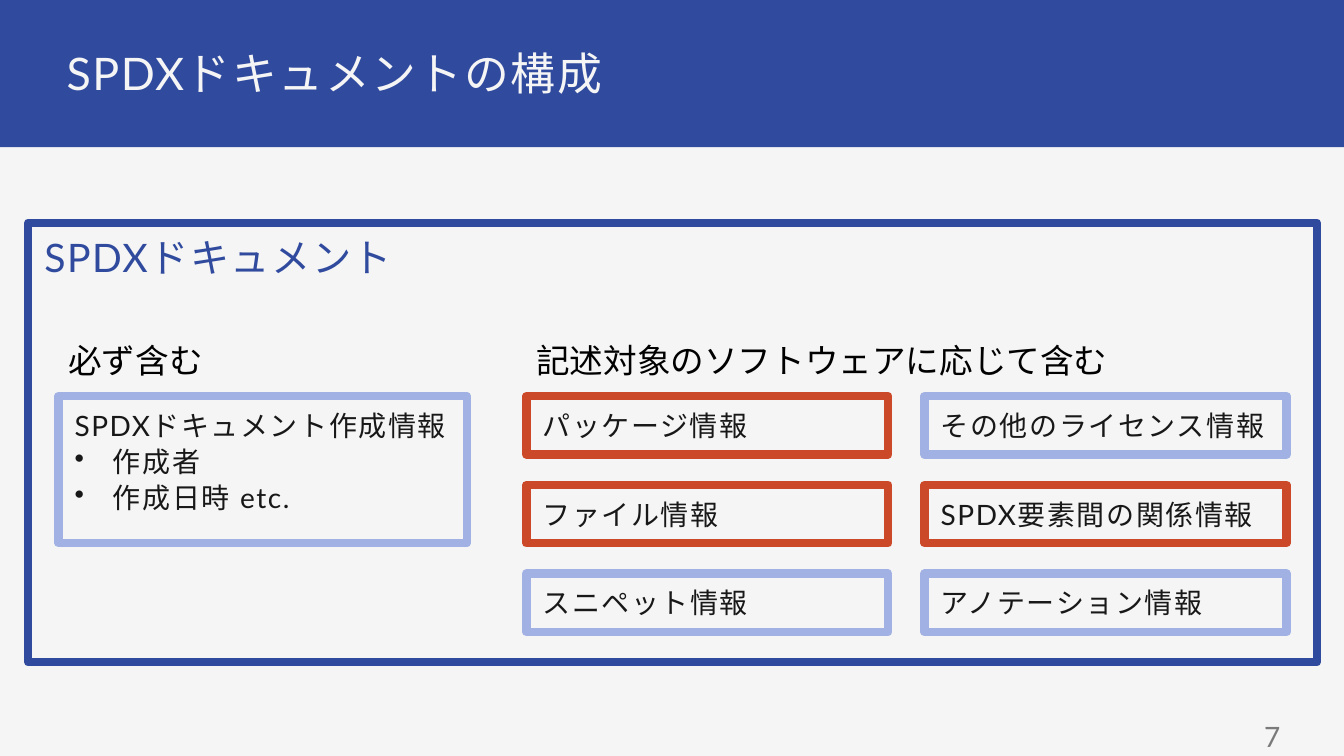
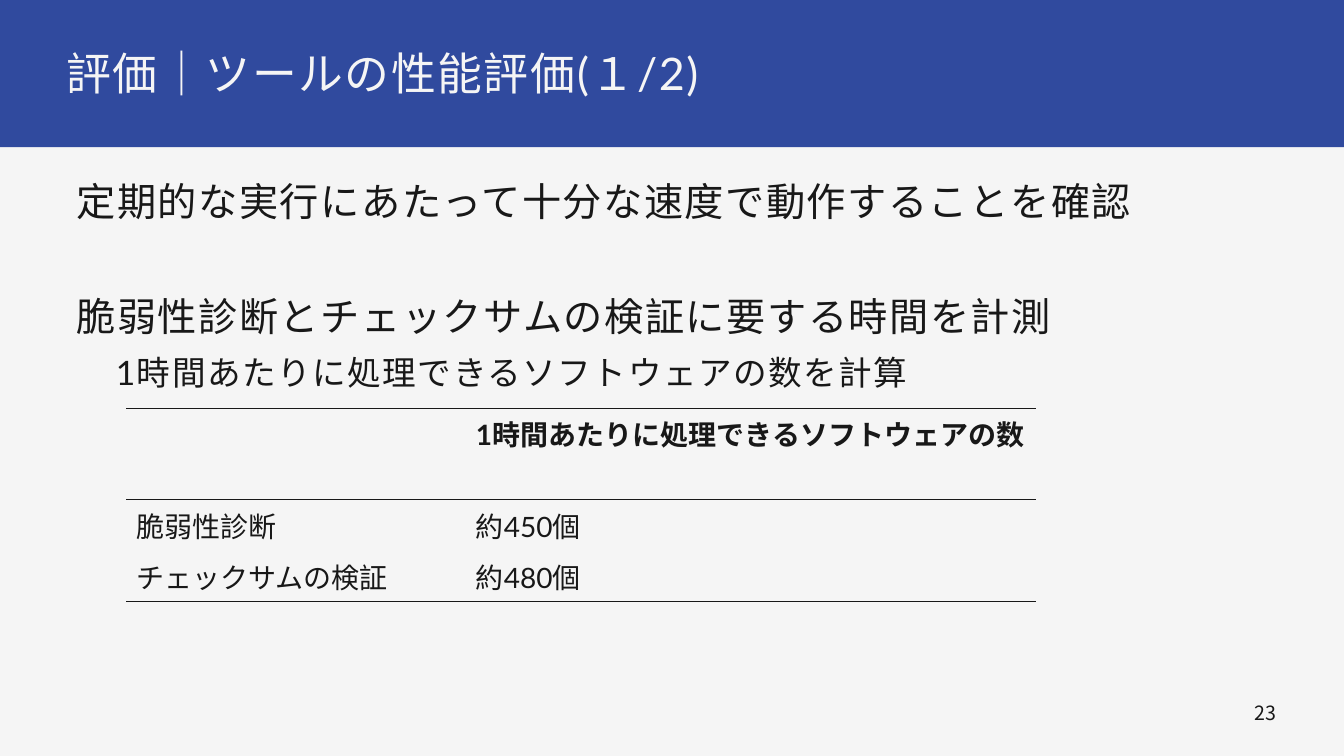
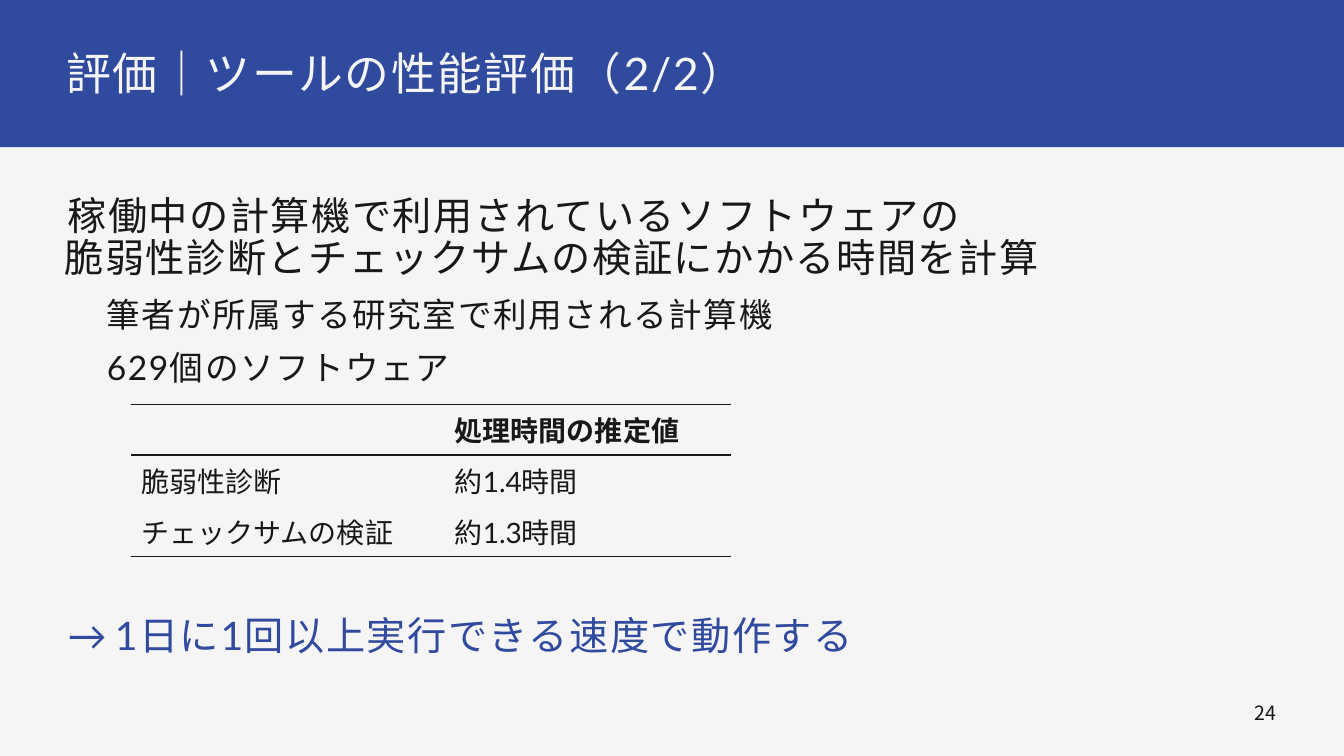
from lxml.etree import SubElement
from pptx import Presentation
from pptx.dml.color import RGBColor
from pptx.enum.shapes import MSO_SHAPE
from pptx.enum.text import MSO_ANCHOR, MSO_AUTO_SIZE, PP_ALIGN
from pptx.oxml.ns import qn
from pptx.util import Inches, Pt

BLUE, LIGHT_BLUE, RED = "304A9E", "A2B1E3", "CB4828"
PAPER, INK, GREY, BLACK = "F5F5F5", "181818", "7A7A7A", "000000"
LATIN, JAPANESE = "Lato", "Noto Sans CJK JP"
NO_TABLE_STYLE = "{2D5ABB26-0587-4C30-8999-92F81FD0307C}"


def color(value):
    return RGBColor.from_string(value)


def write(para, text, size=20, ink=INK, font=LATIN, east_asian=LATIN, bold=False,
          tracking=0, align=None, line=None, before=None, after=None,
          left=0, first=0, bullet=None):
    """Fill a paragraph; tracking, before and after in points, left and first in inches."""
    para.text = text
    para.alignment = align
    para.line_spacing = line
    if before is not None:
        para.space_before = Pt(before)
    if after is not None:
        para.space_after = Pt(after)
    properties = para._p.get_or_add_pPr()
    properties.set("marL", str(Inches(left)))
    properties.set("indent", str(Inches(first)))
    if bullet:
        SubElement(properties, qn("a:buChar"), char=bullet)
    else:
        SubElement(properties, qn("a:buNone"))
    for span in para.runs:
        span.font.size = Pt(size)
        span.font.bold = bold
        span.font.name = font
        span.font.color.rgb = color(ink)
        run_properties = span._r.get_or_add_rPr()
        SubElement(run_properties, qn("a:ea"), typeface=east_asian)
        if tracking:
            run_properties.set("spc", str(round(tracking * 100)))


def set_frame(shape, margins, anchor=MSO_ANCHOR.TOP):
    """Prepare a text frame; margins in inches: left, top, right, bottom."""
    frame = shape.text_frame
    frame.word_wrap = True
    frame.auto_size = MSO_AUTO_SIZE.NONE
    frame.vertical_anchor = anchor
    (frame.margin_left, frame.margin_top,
     frame.margin_right, frame.margin_bottom) = map(Inches, margins)
    return frame


def paragraphs(frame, count):
    while len(frame.paragraphs) < count:
        frame.add_paragraph()
    return frame.paragraphs


def place(shape, left, top, width, height):
    shape.left, shape.top = Inches(left), Inches(top)
    shape.width, shape.height = Inches(width), Inches(height)


def add_border(cell, side):
    border = SubElement(cell._tc.get_or_add_tcPr(), qn(side), w=str(Pt(1)))
    fill = SubElement(border, qn("a:solidFill"))
    SubElement(fill, qn("a:srgbClr"), val=INK)


class Slides:
    """The deck's style and its current page."""

    def __init__(self):
        self.deck = Presentation()
        self.deck.slide_width, self.deck.slide_height = Inches(13.33), Inches(7.5)
        background = self.deck.slide_master.background.fill
        background.solid()
        background.fore_color.rgb = color(PAPER)
        self.page = None

    def new_page(self, title, layout=1):
        self.page = self.deck.slides.add_slide(self.deck.slide_layouts[layout])
        band = self.rectangle(-0.03, -0.02, 13.39, 1.48)
        band.fill.solid()
        band.fill.fore_color.rgb = color(BLUE)
        band.line.fill.background()
        self.page.shapes._spTree.insert(2, band._element)
        heading = self.page.shapes.title
        place(heading, 0.58, 0.43, 12.18, 0.59)
        frame = set_frame(heading, (0.08, 0.08, 0.08, 0.06))
        write(frame.paragraphs[0], title, size=32, ink=PAPER, tracking=1.1,
              align=PP_ALIGN.JUSTIFY, line=0.9, before=16)

    def rectangle(self, left, top, width, height):
        box = self.page.shapes.add_shape(MSO_SHAPE.RECTANGLE, Inches(left), Inches(top),
                                         Inches(width), Inches(height))
        box.shadow.inherit = False
        return box

    def outlined_box(self, left, top, width, height, outline, heading, items=(), **style):
        box = self.rectangle(left, top, width, height)
        box.fill.background()
        box.line.color.rgb = color(outline)
        box.line.width = Pt(6)
        frame = set_frame(box, (0.16, 0.16, 0.08, 0.08))
        style.update(tracking=1.1, align=PP_ALIGN.LEFT, line=0.9, before=3, after=1)
        first, *others = paragraphs(frame, 1 + len(items))
        write(first, heading, **style)
        for para, item in zip(others, items):
            write(para, item, left=0.38, first=-0.38, bullet="•", **style)

    def label(self, left, top, width, height, text, margins=(0.1, 0.05, 0.1, 0.05),
              anchor=MSO_ANCHOR.TOP, **style):
        box = self.page.shapes.add_textbox(Inches(left), Inches(top),
                                           Inches(width), Inches(height))
        write(set_frame(box, margins, anchor).paragraphs[0], text, **style)

    def page_number(self, number):
        self.label(11.08, 6.9, 1.68, 0.32, number, size=14, font=JAPANESE,
                   east_asian=JAPANESE, align=PP_ALIGN.RIGHT)

    def body(self, left, top, width, height, lines):
        """Each line is its text, its level (0 or 1) and any format that differs."""
        box = self.page.placeholders[1]
        place(box, left, top, width, height)
        frame = set_frame(box, (0.06,) * 4)
        levels = (dict(size=28, before=14), dict(size=24, before=12, left=0.39))
        for para, (text, level, changes) in zip(paragraphs(frame, len(lines)), lines):
            para.level = level
            style = {**levels[level], **changes}
            write(para, text, first=0.03, line=0.9, tracking=1.1, **style)

    def table(self, left, top, widths, rows):
        graphic = self.page.shapes.add_table(len(rows), len(widths), Inches(left), Inches(top),
                                             Inches(sum(widths)), Inches(1.3))
        table = graphic.table
        table.horz_banding = False
        table._tbl.tblPr.find(qn("a:tableStyleId")).text = NO_TABLE_STYLE
        for column, width in zip(table.columns, widths):
            column.width = Inches(width)
        for i, row in enumerate(rows):
            for j, text in enumerate(row):
                cell = table.cell(i, j)
                if text:
                    write(cell.text_frame.paragraphs[0], text, bold=i == 0,
                          east_asian=JAPANESE)
                if i == 0:
                    add_border(cell, "a:lnT")
                if i in (0, len(rows) - 1):
                    add_border(cell, "a:lnB")
                cell.fill.background()


def document_structure(slides):
    slides.new_page("SPDXドキュメントの構成", layout=5)
    slides.outlined_box(0.28, 2.21, 12.78, 4.36, BLUE, "SPDXドキュメント", size=28, ink=BLUE)
    slides.outlined_box(0.58, 3.93, 4.05, 1.46, LIGHT_BLUE, "SPDXドキュメント作成情報",
                        ("作成者", "作成日時 etc."))
    optional_parts = (
        (("パッケージ情報", RED), ("その他のライセンス情報", LIGHT_BLUE)),
        (("ファイル情報", RED), ("SPDX要素間の関係情報", RED)),
        (("スニペット情報", LIGHT_BLUE), ("アノテーション情報", LIGHT_BLUE)),
    )
    for i, row in enumerate(optional_parts):
        for j, (text, outline) in enumerate(row):
            slides.outlined_box(5.22 + 3.95 * j, 3.93 + 0.88 * i, 3.59, 0.58, outline, text)
    for left, width, text in ((0.58, 1.55, "必ず含む"),
                              (5.22, 5.92, "記述対象のソフトウェアに応じて含む")):
        slides.label(left, 3.32, width, 0.5, text, size=24, ink=BLACK,
                     font=JAPANESE, east_asian=JAPANESE)
    slides.label(9.76, 7.11, 3, 0.39, "7", margins=(0.06,) * 4, anchor=MSO_ANCHOR.MIDDLE,
                 ink=GREY, align=PP_ALIGN.RIGHT)


def throughput(slides):
    slides.new_page("評価｜ツールの性能評価(１/2)")
    slides.body(0.67, 1.75, 12, 2.1, (
        ("定期的な実行にあたって十分な速度で動作することを確認", 0, {}),
        ("脆弱性診断とチェックサムの検証に要する時間を計測", 0, {"before": 52}),
        ("1時間あたりに処理できるソフトウェアの数を計算", 1, {}),
    ))
    slides.page_number("23")
    slides.table(1.25, 4.05, (3.37, 5.66), (
        ("", "1時間あたりに処理できるソフトウェアの数"),
        ("脆弱性診断", "約450個"),
        ("チェックサムの検証", "約480個"),
    ))


def processing_time(slides):
    slides.new_page("評価｜ツールの性能評価（2/2）")
    slides.body(0.58, 1.89, 12.18, 5.18, (
        ("稼働中の計算機で利用されているソフトウェアの\v"
         "脆弱性診断とチェックサムの検証にかかる時間を計算", 0, {}),
        ("筆者が所属する研究室で利用される計算機", 1, {}),
        ("629個のソフトウェア", 1, {}),
        ("→\t1日に1回以上実行できる速度で動作する", 0, {"before": 164, "ink": BLUE}),
    ))
    slides.page_number("24")
    slides.table(1.3, 4.01, (3.11, 2.84), (
        ("", "処理時間の推定値"),
        ("脆弱性診断", "約1.4時間"),
        ("チェックサムの検証", "約1.3時間"),
    ))


def main():
    slides = Slides()
    document_structure(slides)
    throughput(slides)
    processing_time(slides)
    slides.deck.save("out.pptx")


if __name__ == "__main__":
    main()
